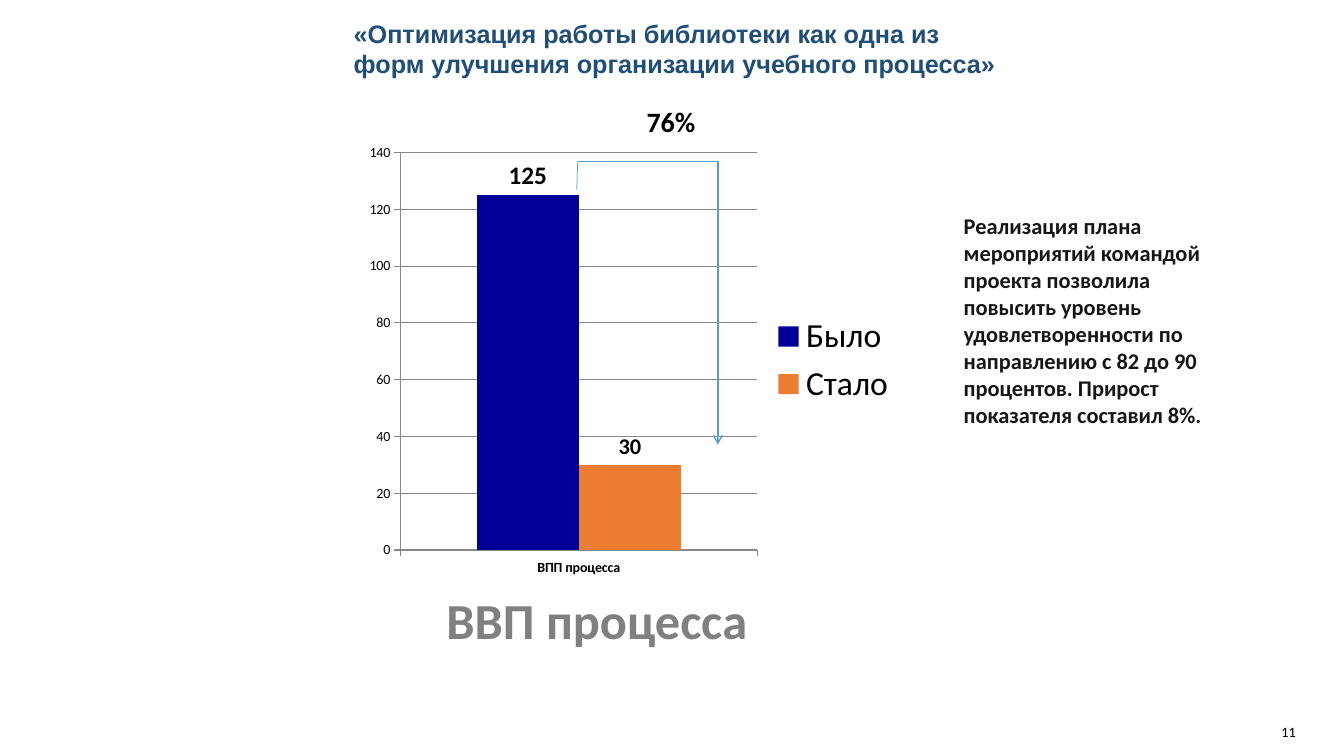
from lxml import etree
from pptx import Presentation
from pptx import util as u
from pptx.chart.data import CategoryChartData
from pptx.dml.color import RGBColor
from pptx.enum import chart as charts, shapes, text
from pptx.oxml import parse_xml
from pptx.oxml.ns import nsdecls, qn

PX = 9144  # 100 px to the inch


def color(hex_string):
    return RGBColor.from_string(hex_string)


def write(shape, box, content, size, ink, align=text.PP_ALIGN.LEFT,
          anchor=text.MSO_ANCHOR.TOP, inset=None, wrap=True, font="Calibri", bold=True):
    """Place a shape and fill it with one formatted paragraph."""
    for name, value in zip(("left", "top", "width", "height"), box):
        setattr(shape, name, value * PX)
    frame = shape.text_frame
    frame.text = content
    settings = {"word_wrap": wrap, "auto_size": text.MSO_AUTO_SIZE.NONE,
                "vertical_anchor": anchor}
    if inset is not None:
        for side in ("left", "top", "right", "bottom"):
            settings[f"margin_{side}"] = inset * PX
    for name, value in settings.items():
        setattr(frame, name, value)
    paragraph = frame.paragraphs[0]
    paragraph.alignment = align
    run_font = paragraph.runs[0].font
    for name, value in {"name": font, "size": u.Pt(size), "bold": bold}.items():
        setattr(run_font, name, value)
    run_font.color.rgb = color(ink)


presentation = Presentation()
presentation.slide_width = 1333 * PX
presentation.slide_height = 750 * PX
slide = presentation.slides.add_slide(presentation.slide_layouts[5])
centered = {"align": text.PP_ALIGN.CENTER, "anchor": text.MSO_ANCHOR.MIDDLE, "inset": 0}

# Title under the chart
write(slide.shapes.title, (95, 591, 994, 55), "ВВП процесса", 36, "808080", **centered)
slide.shapes.title.text_frame.paragraphs[0].line_spacing = 0.9

# Before and after chart
SERIES = [("Было", 125, "000099", 18), ("Стало", 30, "ED7D31", 16)]
data = CategoryChartData()
data.categories = ["ВПП процесса"]
for name, value, fill, label_size in SERIES:
    data.add_series(name, [value])
chart = slide.shapes.add_chart(
    charts.XL_CHART_TYPE.COLUMN_CLUSTERED,
    355 * PX, 135 * PX, 545 * PX, 445 * PX, data).chart
chart.has_title = False
chart.font.name = "Calibri"
chart.font.size = u.Pt(10)
chart.font.color.rgb = color("000000")
chart.has_legend = True
chart.legend.position = charts.XL_LEGEND_POSITION.RIGHT
chart.legend.include_in_layout = False
chart.legend.font.size = u.Pt(24)

value_axis, category_axis = chart.value_axis, chart.category_axis
scale = {"minimum_scale": 0, "maximum_scale": 140, "major_unit": 20}
for name, value in scale.items():
    setattr(value_axis, name, value)
category_axis.tick_labels.font.bold = True
for axis in (value_axis, category_axis):
    axis.major_tick_mark = charts.XL_TICK_MARK.OUTSIDE
for line_owner in (value_axis, category_axis, value_axis.major_gridlines):
    line_owner.format.line.color.rgb = color("878787")
    line_owner.format.line.width = u.Pt(0.75)

plot = chart.plots[0]
plot.gap_width = 150
plot.overlap = 0
plot.vary_by_categories = False
for series, (name, value, fill, label_size) in zip(plot.series, SERIES):
    series.format.fill.solid()
    series.format.fill.fore_color.rgb = color(fill)
    labels = series.data_labels
    labels.show_value = True
    labels.position = charts.XL_LABEL_POSITION.OUTSIDE_END
    labels.font.size = u.Pt(label_size)
    labels.font.bold = True
    labels.font.color.rgb = color("000000")

# Inner plot area as shares of the chart
plot_area = chart._chartSpace.chart.plotArea
for old_layout in plot_area.findall(qn("c:layout")):
    plot_area.remove(old_layout)
shares = "".join(f'<c:{name} val="{value}"/>' for name, value in (
    ("layoutTarget", "inner"), ("xMode", "edge"), ("yMode", "edge"),
    ("x", 0.077), ("y", 0.037), ("w", 0.65), ("h", 0.886)))
plot_area.insert(0, parse_xml(
    f'<c:layout {nsdecls("c")}><c:manualLayout>{shares}</c:manualLayout></c:layout>'))

# Conclusion
write(slide.shapes.add_textbox(0, 0, 0, 0), (946, 206, 288, 226),
      "Реализация плана мероприятий командой проекта позволила повысить уровень "
      "удовлетворенности по направлению с 82 до 90 процентов. "
      "Прирост показателя составил 8%.", 16, "171616")

# Reduction and its bracket
reduction = slide.shapes.add_shape(shapes.MSO_SHAPE.OVAL, 0, 0, 0, 0)
reduction.shadow.inherit = False
reduction.fill.background()
reduction.line.fill.background()
write(reduction, (620, 99, 91, 42), "76%", 20, "000000", wrap=False, **centered)

corners = [(572, 188), (573, 160), (712, 160), (712, 441)]
for start, end, width in zip(corners, corners[1:], (0.5, 0.5, 1)):
    bracket = slide.shapes.add_connector(
        shapes.MSO_CONNECTOR.STRAIGHT, *(value * PX for value in start + end))
    bracket.line.color.rgb = color("5B9BD5")
    bracket.line.width = u.Pt(width)
    etree.SubElement(bracket._element.spPr, qn("a:effectLst"))
etree.SubElement(bracket.line._get_or_add_ln(), qn("a:tailEnd"), type="arrow")

# Project name and page number
write(slide.shapes.add_textbox(0, 0, 0, 0), (341, 13, 667, 71),
      "«Оптимизация работы библиотеки как одна из форм улучшения "
      "организации учебного процесса»", 18, "1F4E79", font="Arial")
write(slide.shapes.add_textbox(0, 0, 0, 0), (1271, 718, 31, 17), "11", 10.2, "000000",
      anchor=text.MSO_ANCHOR.MIDDLE, inset=0, wrap=False, bold=False)

presentation.save("out.pptx")
